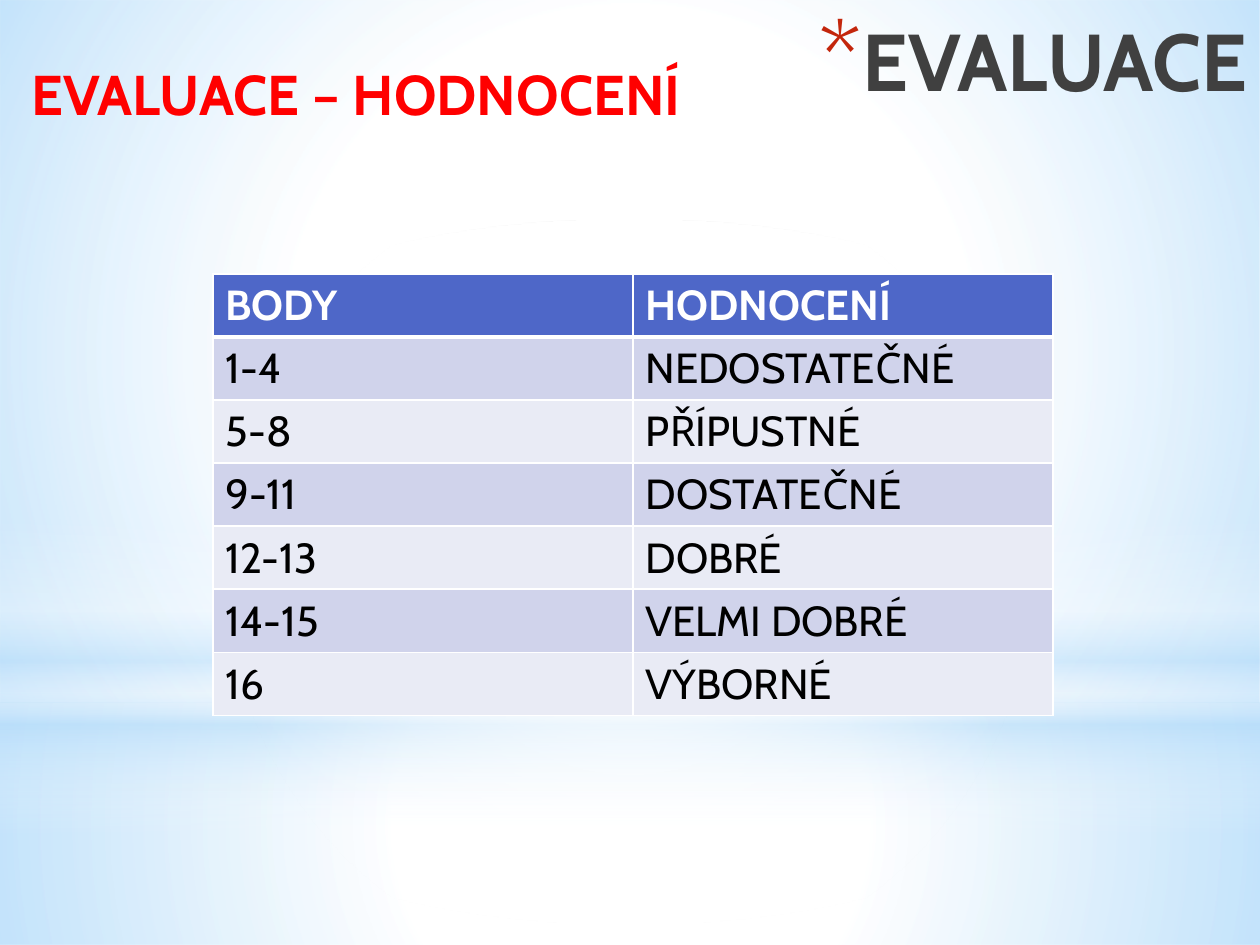
from dataclasses import dataclass
from typing import Optional

from lxml.etree import SubElement
from pptx import Presentation
from pptx.dml.color import RGBColor
from pptx.enum.shapes import MSO_SHAPE
from pptx.enum.text import MSO_ANCHOR, MSO_AUTO_SIZE, PP_ALIGN
from pptx.oxml.ns import qn
from pptx.util import Emu, Pt

SCALE = 914400 / 126
FONT = "Cabin"
WHITE = RGBColor(0xFF, 0xFF, 0xFF)
BLACK = RGBColor(0x00, 0x00, 0x00)
RED = RGBColor(0xFF, 0x00, 0x00)
GRAY = RGBColor(0x40, 0x40, 0x40)
BULLET = RGBColor(0xC3, 0x26, 0x0C)
SKY = RGBColor(0xB4, 0xDC, 0xFA)
HEADER = RGBColor(0x4E, 0x67, 0xC8)
BAND_DARK = RGBColor(0xD0, 0xD3, 0xEB)
BAND_LIGHT = RGBColor(0xE9, 0xEB, 0xF5)


@dataclass
class Stop:
    position: int
    color: RGBColor
    opacity: int


@dataclass
class Glow:
    top: int
    height: int
    stops: list[Stop]
    angle: Optional[int] = None
    kind: MSO_SHAPE = MSO_SHAPE.RECTANGLE


GLOWS = [
    Glow(703, 242, [Stop(0, WHITE, 91), Stop(37, WHITE, 76), Stop(100, SKY, 79)]),
    Glow(0, 703, [Stop(0, WHITE, 89), Stop(48, WHITE, 62), Stop(100, SKY, 79)]),
    Glow(519, 315, [Stop(0, WHITE, 0), Stop(29, WHITE, 30), Stop(45, SKY, 40),
                    Stop(55, WHITE, 26), Stop(65, SKY, 60), Stop(100, WHITE, 0)], angle=90),
    Glow(220, 703, [Stop(0, WHITE, 100), Stop(56, WHITE, 0)], kind=MSO_SHAPE.OVAL),
]
ROWS = [
    ("BODY", "HODNOCENÍ"),
    ("1-4", "NEDOSTATEČNÉ"),
    ("5-8", "PŘÍPUSTNÉ"),
    ("9-11", "DOSTATEČNÉ"),
    ("12-13", "DOBRÉ"),
    ("14-15", "VELMI DOBRÉ"),
    ("16", "VÝBORNÉ"),
]


def px(value: int) -> Emu:
    return Emu(round(value * SCALE))


def add(parent, tag: str, **attributes):
    return SubElement(parent, qn(tag), {key: str(value) for key, value in attributes.items()})


def write(frame, text: str, *, size: int, color: RGBColor, bold: bool = False,
          align: PP_ALIGN = PP_ALIGN.LEFT) -> None:
    paragraph = frame.paragraphs[0]
    paragraph.alignment = align
    run = paragraph.add_run()
    run.text = text
    run.font.name = FONT
    run.font.size = Pt(size)
    run.font.bold = bold
    run.font.color.rgb = color


def draw_glow(slide, glow: Glow) -> None:
    shape = slide.shapes.add_shape(glow.kind, 0, px(glow.top), px(1260), px(glow.height))
    shape.shadow.inherit = False
    shape.line.fill.background()
    shape.fill.gradient()
    gradient = shape.element.spPr.find(qn("a:gradFill"))
    for child in list(gradient):
        gradient.remove(child)
    stop_list = add(gradient, "a:gsLst")
    for stop in glow.stops:
        entry = add(stop_list, "a:gs", pos=stop.position * 1000)
        color = add(entry, "a:srgbClr", val=stop.color)
        add(color, "a:alpha", val=stop.opacity * 1000)
    if glow.angle is None:
        radial = add(gradient, "a:path", path="circle")
        add(radial, "a:fillToRect", l=50000, t=50000, r=50000, b=50000)
    else:
        add(gradient, "a:lin", ang=glow.angle * 60000, scaled=0)


def draw_title(slide) -> None:
    title = slide.shapes.title
    title.left, title.top, title.width, title.height = px(595), px(5), px(665), px(77)
    frame = title.text_frame
    frame.auto_size = MSO_AUTO_SIZE.NONE
    frame.vertical_anchor = MSO_ANCHOR.TOP
    indent = px(44)
    properties = frame.paragraphs[0]._p.get_or_add_pPr()
    properties.set("marL", str(indent))
    properties.set("indent", str(-indent))
    add(add(properties, "a:buClr"), "a:srgbClr", val=BULLET)
    add(properties, "a:buSzPct", val=128000)
    add(properties, "a:buFont", typeface=FONT)
    add(properties, "a:buChar", char="*")
    write(frame, "EVALUACE", size=46, color=GRAY, bold=True, align=PP_ALIGN.RIGHT)
    title.element.getparent().append(title.element)


def draw_heading(slide) -> None:
    heading = slide.shapes.add_textbox(px(19), px(53), px(1252), px(310))
    heading.text_frame.word_wrap = True
    write(heading.text_frame, "EVALUACE – HODNOCENÍ", size=32, color=RED, bold=True)


def set_borders(cell, row: int) -> None:
    properties = cell._tc.get_or_add_tcPr()
    widths = {"L": 1, "R": 1, "T": 3 if row == 1 else 1, "B": 3 if row == 0 else 1}
    for side, width in widths.items():
        line = add(properties, f"a:ln{side}", w=Pt(width))
        add(add(line, "a:solidFill"), "a:srgbClr", val=WHITE)


def draw_table(slide) -> None:
    row_height = 63
    frame = slide.shapes.add_table(len(ROWS), 2, px(213), px(274), px(840), px(row_height * len(ROWS)))
    for row, texts in enumerate(ROWS):
        is_header = row == 0
        fill = HEADER if is_header else BAND_DARK if row % 2 else BAND_LIGHT
        for column, text in enumerate(texts):
            cell = frame.table.cell(row, column)
            set_borders(cell, row)
            cell.fill.solid()
            cell.fill.fore_color.rgb = fill
            write(cell.text_frame, text, size=24, color=WHITE if is_header else BLACK, bold=is_header)


def main() -> None:
    presentation = Presentation()
    presentation.slide_width, presentation.slide_height = px(1260), px(945)
    slide = presentation.slides.add_slide(presentation.slide_layouts[5])
    slide.background.fill.solid()
    slide.background.fill.fore_color.rgb = WHITE
    for glow in GLOWS:
        draw_glow(slide, glow)
    draw_title(slide)
    draw_heading(slide)
    draw_table(slide)
    presentation.save("out.pptx")


if __name__ == "__main__":
    main()
